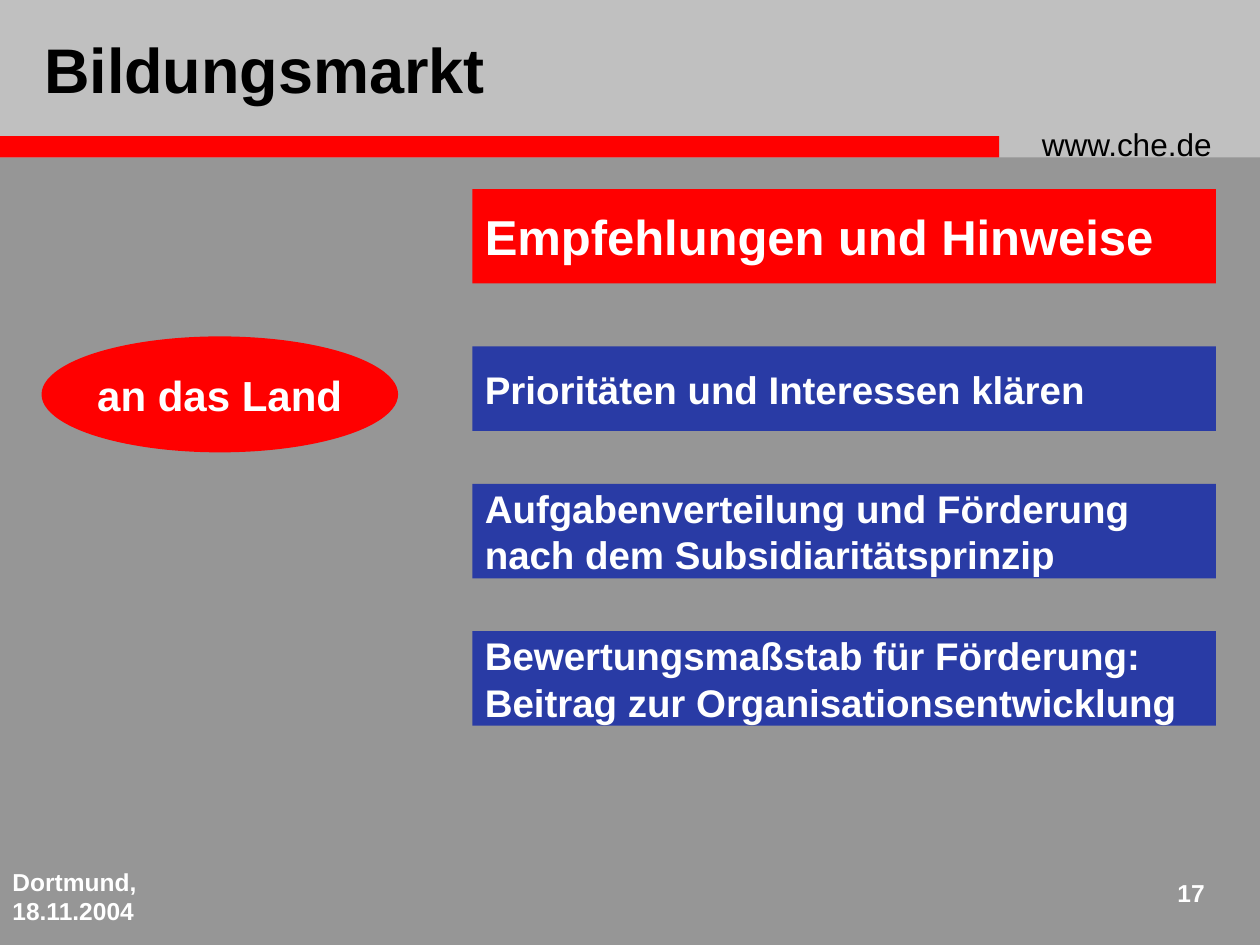
from dataclasses import dataclass

from pptx import Presentation
from pptx.dml.color import RGBColor
from pptx.enum.shapes import MSO_SHAPE
from pptx.enum.text import MSO_ANCHOR, PP_ALIGN
from pptx.util import Inches, Pt


@dataclass(frozen=True)
class Theme:
    font: str = "Arial"
    background: str = "969696"
    band: str = "C0C0C0"
    accent: str = "FF0000"
    box: str = "293BA5"
    dark: str = "000000"
    light: str = "FFFFFF"
    title_size: int = 36
    heading_size: int = 28
    audience_size: int = 24
    body_size: int = 22
    address_size: int = 18
    footer_size: int = 14


theme = Theme()


def write_text(shape, text, size, color=theme.light, bold=True,
               align=PP_ALIGN.LEFT, anchor=MSO_ANCHOR.MIDDLE, wrap=False):
    """Fill the shape with one paragraph per line of text."""
    frame = shape.text_frame
    frame.text = text
    frame.word_wrap = wrap
    frame.vertical_anchor = anchor
    for paragraph in frame.paragraphs:
        paragraph.alignment = align
        font = paragraph.font
        font.name = theme.font
        font.size = Pt(size)
        font.bold = bold
        font.color.rgb = RGBColor.from_string(color)


def add_filled_shape(kind, left, top, width, height, color):
    shape = slide.shapes.add_shape(
        kind, Inches(left), Inches(top), Inches(width), Inches(height))
    shape.shadow.inherit = False
    shape.fill.solid()
    shape.fill.fore_color.rgb = RGBColor.from_string(color)
    shape.line.fill.background()
    return shape


presentation = Presentation()
presentation.slide_width = Inches(10)
presentation.slide_height = Inches(7.5)
slide = presentation.slides.add_slide(presentation.slide_layouts[5])
slide.background.fill.solid()
slide.background.fill.fore_color.rgb = RGBColor.from_string(theme.background)

# Header band, red rule and title
add_filled_shape(MSO_SHAPE.RECTANGLE, 0, 0, 10, 1.25, theme.band)
add_filled_shape(MSO_SHAPE.RECTANGLE, 0, 1.08, 7.93, 0.17, theme.accent)

title = slide.shapes.title
title.left, title.top = Inches(0.25), Inches(0.17)
title.width, title.height = Inches(5.68), Inches(0.75)
write_text(title, "Bildungsmarkt", theme.title_size, color=theme.dark, wrap=True)
slide.shapes._spTree.append(title._element)  # in front of the header band

# Web address, place and date, page number
small_texts = [
    ("www.che.de", 8.17, 0.94, 1.75, 0.4,
     dict(size=theme.address_size, color=theme.dark, bold=False)),
    ("Dortmund, 18.11.2004", 0, 6.83, 2.08, 0.5, dict(size=theme.footer_size)),
    ("17", 9.08, 6.92, 0.58, 0.42,
     dict(size=theme.footer_size, align=PP_ALIGN.RIGHT)),
]
for text, left, top, width, height, text_format in small_texts:
    text_box = slide.shapes.add_textbox(
        Inches(left), Inches(top), Inches(width), Inches(height))
    write_text(text_box, text, anchor=MSO_ANCHOR.TOP, wrap=True, **text_format)

# Audience and recommendations
audience = add_filled_shape(MSO_SHAPE.OVAL, 0.33, 2.67, 2.83, 0.92, theme.accent)
write_text(audience, "an das Land", theme.audience_size, align=PP_ALIGN.CENTER)

recommendations = [
    ("Empfehlungen und Hinweise", 1.5, 0.75, theme.accent, theme.heading_size),
    ("Prioritäten und Interessen klären", 2.75, 0.67, theme.box, theme.body_size),
    ("Aufgabenverteilung und Förderung\nnach dem Subsidiaritätsprinzip",
     3.84, 0.75, theme.box, theme.body_size),
    ("Bewertungsmaßstab für Förderung:\nBeitrag zur Organisationsentwicklung",
     5.01, 0.75, theme.box, theme.body_size),
]
for text, top, height, color, size in recommendations:
    box = add_filled_shape(MSO_SHAPE.RECTANGLE, 3.75, top, 5.9, height, color)
    write_text(box, text, size)

presentation.save("out.pptx")
